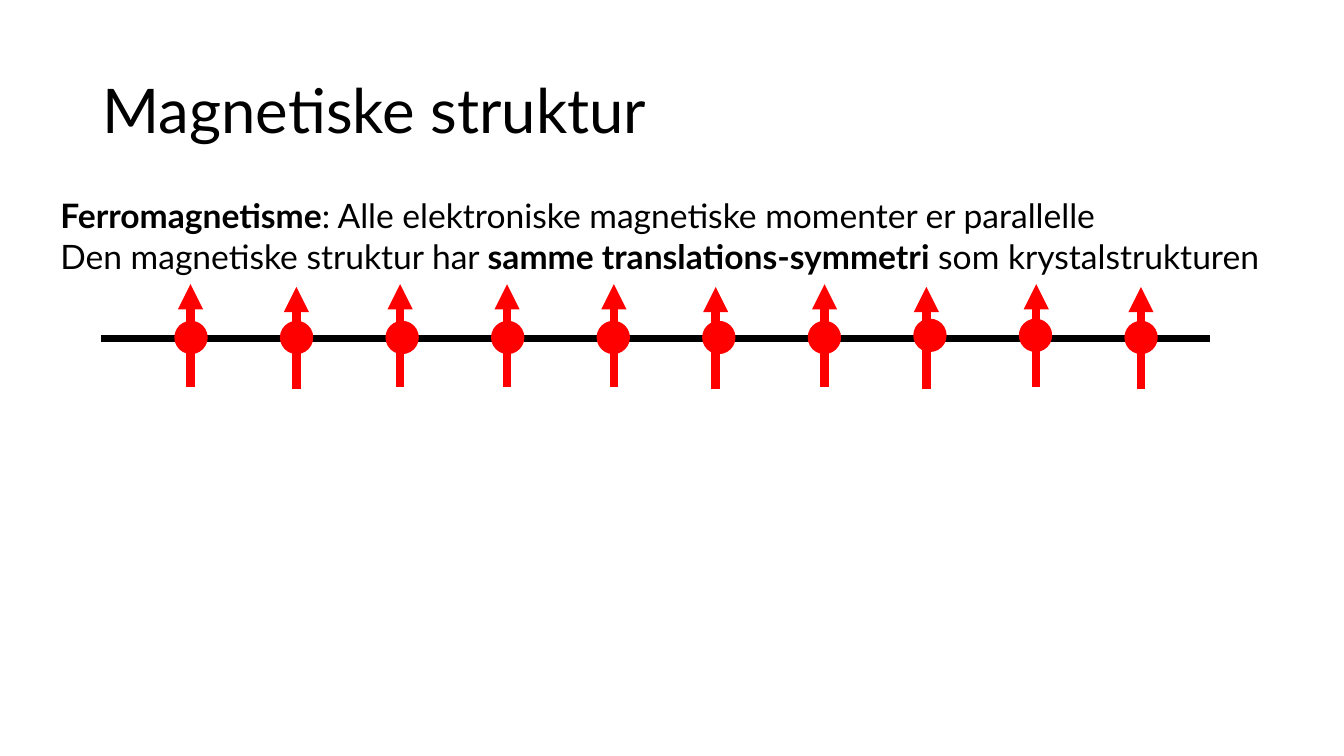
from dataclasses import dataclass

from lxml import etree
from pptx import Presentation
from pptx.dml.color import RGBColor
from pptx.enum.shapes import MSO_CONNECTOR, MSO_SHAPE
from pptx.enum.text import MSO_ANCHOR, PP_ALIGN
from pptx.oxml.ns import qn
from pptx.util import Pt

STRAIGHT = MSO_CONNECTOR.STRAIGHT
ELLIPSE = MSO_SHAPE.OVAL
LEFT = PP_ALIGN.LEFT
TOP = MSO_ANCHOR.TOP
MIDDLE = MSO_ANCHOR.MIDDLE


@dataclass(frozen=True)
class Theme:
    font: str = "Lato"
    title_size: float = 44
    body_size: float = 24
    ink: RGBColor = RGBColor(0, 0, 0)
    spin: RGBColor = RGBColor(255, 0, 0)
    chain_width: float = 4.5
    arrow_width: float = 6
    outline_width: float = 1.5


THEME = Theme()
ATOM_SIZE = 22.3
ATOM_STEP = 75.4
ATOM_RISES = (0, 0, 0, 0, 0, 0, 0, 1.5, 1.5, 0)
ARROW_CENTERS = (64.1, 139.7, 213.8, 290.2, 366.5, 439.2, 517, 589.7, 668.2, 743)
ARROW_DROPS = (0, 2, 0, 0, 0, 2, 0, 2, 0, 2)
ARROW_LENGTH = 73.2


def write_text(frame, paragraphs, *, size, anchor=TOP, line_spacing=1.0):
    frame.word_wrap = True
    frame.vertical_anchor = anchor
    for index, runs in enumerate(paragraphs):
        paragraph = frame.paragraphs[0] if index == 0 else frame.add_paragraph()
        paragraph.alignment = LEFT
        paragraph.line_spacing = line_spacing
        for text, bold in runs:
            run = paragraph.add_run()
            run.text = text
            run.font.name = THEME.font
            run.font.size = Pt(size)
            run.font.bold = bold
            run.font.color.rgb = THEME.ink


def add_line(slide, start, end, *, color, width, arrow=False):
    points = [Pt(value) for value in (*start, *end)]
    connector = slide.shapes.add_connector(STRAIGHT, *points)
    connector.line.color.rgb = color
    connector.line.width = Pt(width)
    if arrow:
        line = connector.line._get_or_add_ln()
        etree.SubElement(line, qn("a:tailEnd"), type="triangle")
    etree.SubElement(connector._element.spPr, qn("a:effectLst"))


def add_atom(slide, left, top):
    atom = slide.shapes.add_shape(
        ELLIPSE, Pt(left), Pt(top), Pt(ATOM_SIZE), Pt(ATOM_SIZE)
    )
    atom.shadow.inherit = False
    atom.fill.solid()
    atom.fill.fore_color.rgb = THEME.spin
    atom.line.color.rgb = THEME.spin
    atom.line.width = Pt(THEME.outline_width)


def place_title(slide, left, top, width, height):
    title = slide.shapes.title
    title.left, title.top = Pt(left), Pt(top)
    title.width, title.height = Pt(width), Pt(height)
    write_text(
        title.text_frame,
        [[("Magnetiske struktur", False)]],
        size=THEME.title_size,
        anchor=MIDDLE,
        line_spacing=0.9,
    )


def add_spin_chain(slide, left, top, width, height):
    middle = top + height / 2
    add_line(
        slide,
        (left, middle),
        (left + width, middle),
        color=THEME.ink,
        width=THEME.chain_width,
    )
    for index, rise in enumerate(ATOM_RISES):
        atom_left = left + 53.3 + index * ATOM_STEP
        add_atom(slide, atom_left, middle - 12 - rise)
    for center, drop in zip(ARROW_CENTERS, ARROW_DROPS):
        tip = top + drop
        add_line(
            slide,
            (left + center, tip + ARROW_LENGTH),
            (left + center, tip),
            color=THEME.spin,
            width=THEME.arrow_width,
            arrow=True,
        )


def add_explanation(slide, left, top, width, height):
    box = slide.shapes.add_textbox(Pt(left), Pt(top), Pt(width), Pt(height))
    write_text(
        box.text_frame,
        [
            [
                ("Ferromagnetisme", True),
                (": Alle elektroniske magnetiske momenter er parallelle", False),
            ],
            [
                ("Den magnetiske struktur har ", False),
                ("samme translations-symmetri", True),
                (" som krystalstrukturen", False),
            ],
        ],
        size=THEME.body_size,
    )


def main():
    presentation = Presentation()
    presentation.slide_width = Pt(960)
    presentation.slide_height = Pt(540)
    title_only = presentation.slide_layouts[5]
    slide = presentation.slides.add_slide(title_only)
    place_title(slide, 66, 28.8, 828, 104.4)
    add_spin_chain(slide, 72, 203, 792, 77.8)
    add_explanation(slide, 36, 136, 924, 124)
    presentation.save("out.pptx")


if __name__ == "__main__":
    main()
